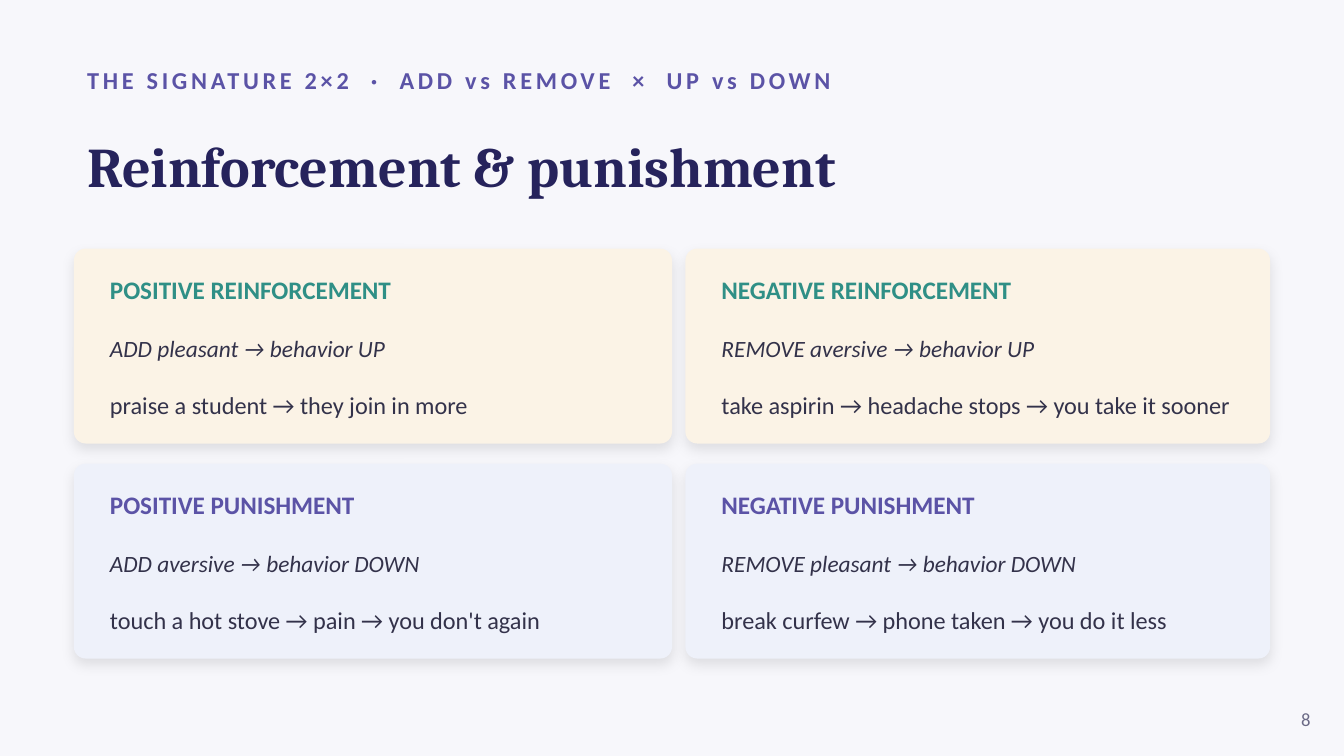
"""Build the reinforcement and punishment two-by-two slide."""
from lxml.etree import SubElement
from pptx import Presentation
from pptx.dml.color import RGBColor
from pptx.enum.shapes import MSO_SHAPE
from pptx.enum.text import MSO_ANCHOR, PP_ALIGN
from pptx.oxml.ns import qn
from pptx.util import Inches, Pt


def color(value):
    """Turn a hex string into a colour."""
    return RGBColor.from_string(value)


def add_span(para, text, size, fill, font="Calibri", bold=False, italic=False):
    """Add one formatted run to a paragraph."""
    span = para.add_run()
    span.text = text
    span.font.name = font
    span.font.size = Pt(size)
    span.font.bold = bold
    span.font.italic = italic
    span.font.color.rgb = color(fill)
    return span


INDIGO, TEAL, INK = "5B53A6", "2F8F86", "33324A"
CREAM, MIST = "FBF3E6", "EEF1FA"
COLUMNS = [(0.55, 4.45, 4.1), (5.1, 4.35, 4)]
ROWS = [
    (CREAM, TEAL, [
        ("POSITIVE REINFORCEMENT", "ADD pleasant → behavior UP",
         "praise a student → they join in more"),
        ("NEGATIVE REINFORCEMENT", "REMOVE aversive → behavior UP",
         "take aspirin → headache stops → you take it sooner"),
    ]),
    (MIST, INDIGO, [
        ("POSITIVE PUNISHMENT", "ADD aversive → behavior DOWN",
         "touch a hot stove → pain → you don't again"),
        ("NEGATIVE PUNISHMENT", "REMOVE pleasant → behavior DOWN",
         "break curfew → phone taken → you do it less"),
    ]),
]

deck = Presentation()
deck.slide_width = Inches(10)
deck.slide_height = Inches(10) * 9 // 16
page = deck.slides.add_slide(deck.slide_layouts[5])
page.background.fill.solid()
page.background.fill.fore_color.rgb = color("F7F7FB")

title = page.shapes.title
title.left, title.top = Inches(0.55), Inches(0.78)
title.width, title.height = Inches(8.9), Inches(0.9)
title.text_frame.vertical_anchor = MSO_ANCHOR.MIDDLE
para = title.text_frame.paragraphs[0]
para.alignment = PP_ALIGN.LEFT
add_span(para, "Reinforcement & punishment", 30, "26235C", "Cambria", bold=True)

kicker = page.shapes.add_textbox(Inches(0.55), Inches(0.42), Inches(9), Inches(0.35))
kicker.text_frame.word_wrap = True
kicker.text_frame.vertical_anchor = MSO_ANCHOR.MIDDLE
span = add_span(kicker.text_frame.paragraphs[0],
                "THE SIGNATURE 2×2  ·  ADD vs REMOVE  ×  UP vs DOWN", 13, INDIGO, bold=True)
span.font._element.set("spc", "200")

for row, (card_fill, heading_fill, cells) in enumerate(ROWS):
    top = 1.85 + row * 1.6
    for (left, width, text_width), (heading, rule, example) in zip(COLUMNS, cells):
        card = page.shapes.add_shape(MSO_SHAPE.ROUNDED_RECTANGLE, Inches(left), Inches(top),
                                     Inches(width), Inches(1.45))
        card.adjustments[0] = 0.06
        card.fill.solid()
        card.fill.fore_color.rgb = color(card_fill)
        card.line.fill.background()
        card.shadow.inherit = False
        effects = card._element.spPr.find(qn("a:effectLst"))
        shadow = SubElement(effects, qn("a:outerShdw"), blurRad=str(Pt(7)), dist=str(Pt(3)),
                            dir="5400000", algn="ctr", rotWithShape="0")
        tint = SubElement(shadow, qn("a:srgbClr"), val="000000")
        SubElement(tint, qn("a:alpha"), val="10000")

        box = page.shapes.add_textbox(Inches(left + 0.17), Inches(top + 0.13),
                                      Inches(text_width), Inches(1.2))
        frame = box.text_frame
        frame.word_wrap = True
        frame.vertical_anchor = MSO_ANCHOR.MIDDLE
        add_span(frame.paragraphs[0], heading, 13.5, heading_fill, bold=True)
        para = frame.add_paragraph()
        para.space_before = Pt(16)
        add_span(para, rule, 12.5, INK, italic=True)
        para = frame.add_paragraph()
        para.space_before = Pt(15.25)
        add_span(para, example, 13, INK)

number = page.shapes.add_textbox(Inches(9.35), Inches(5.2), Inches(0.5), Inches(0.3))
number.text_frame.word_wrap = True
number.text_frame.vertical_anchor = MSO_ANCHOR.MIDDLE
para = number.text_frame.paragraphs[0]
para.alignment = PP_ALIGN.RIGHT
add_span(para, "8", 10, "6B6A86")

deck.save("out.pptx")
